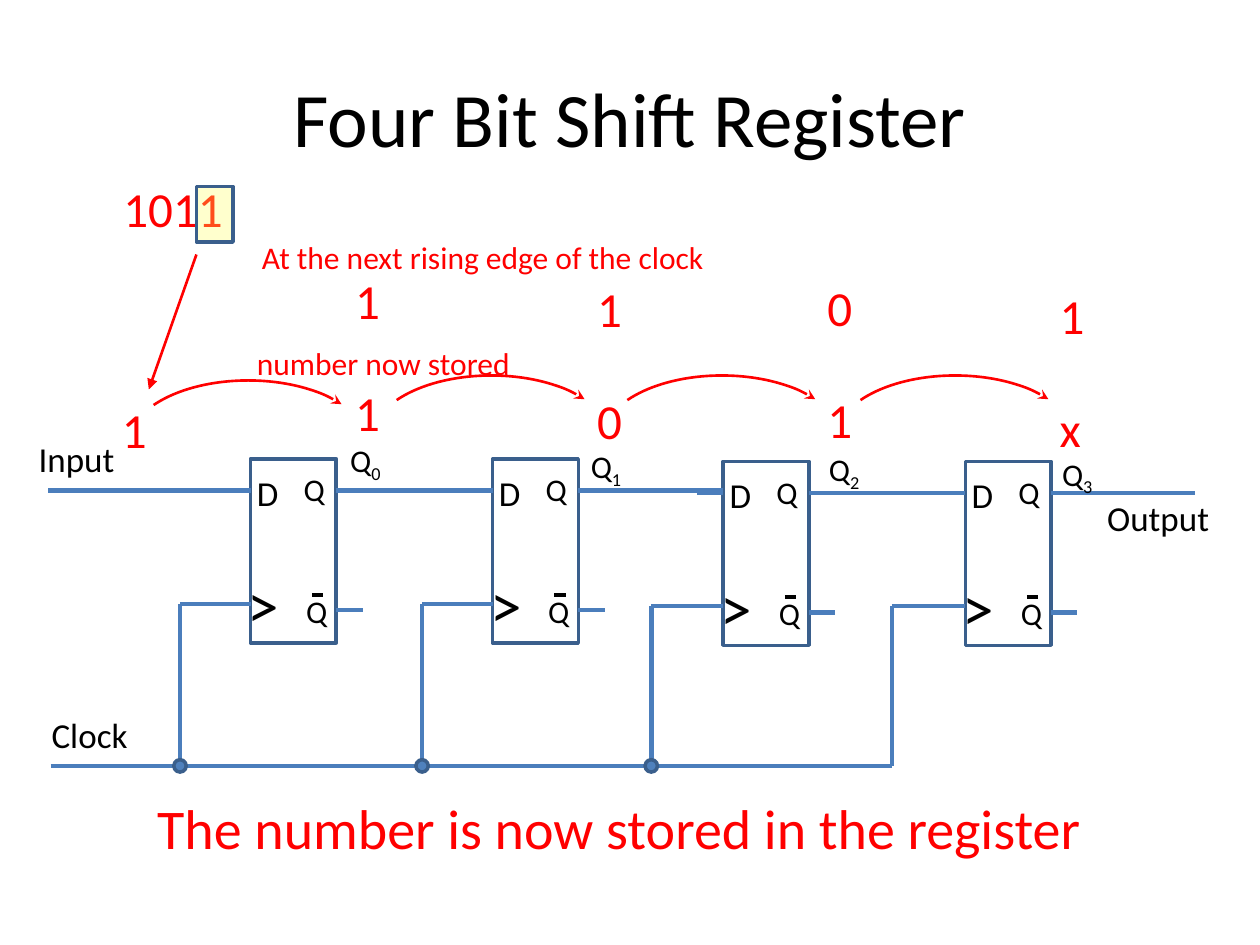
from lxml import etree
from pptx import Presentation
from pptx.dml.color import RGBColor
from pptx.enum.shapes import MSO_CONNECTOR, MSO_SHAPE
from pptx.enum.text import MSO_ANCHOR, MSO_AUTO_SIZE, PP_ALIGN
from pptx.oxml.ns import qn
from pptx.util import Cm, Pt

STRAIGHT = MSO_CONNECTOR.STRAIGHT
RECT, OVAL, ARC = MSO_SHAPE.RECTANGLE, MSO_SHAPE.OVAL, MSO_SHAPE.ARC
GROW = MSO_AUTO_SIZE.SHAPE_TO_FIT_TEXT
COLORS = {"black": "000000", "white": "FFFFFF", "red": "FF0000", "wire": "4B7EBC",
          "edge": "3A5F8C", "dot": "4F81BD", "mark": "FFFF5B"}

# Content, all lengths in cm
TITLE = "Four Bit Shift Register"
STAGES = [  # flip-flop corner, clock drop x, label corner, bit corner, arc corner, new and old bit
    {"ff": (5.05, 9.25), "drop": 3.63, "label": (6.81, 8.76), "bit": (6.91, 7.59),
     "arc": (2.59, 7.67), "new": "1", "old": "1"},
    {"ff": (9.93, 9.25), "drop": 8.51, "label": (11.66, 8.89), "bit": (11.79, 7.75),
     "arc": (7.49, 7.57), "new": "1", "old": "0"},
    {"ff": (14.58, 9.3), "drop": 13.13, "label": (16.46, 8.94), "bit": (16.43, 7.72),
     "arc": (12.14, 7.57), "new": "0", "old": "1"},
    {"ff": (19.46, 9.3), "drop": 17.98, "label": (21.16, 9.04), "bit": (21.11, 7.9),
     "arc": (16.84, 7.57), "new": "1", "old": "x"},
]
FF_W, FF_H = 1.73, 3.71
DATA_Y, CLOCK_Y, QBAR_Y = 0.64, 2.92, 3.05  # pin rows inside a flip-flop
PIN_TEXTS = [  # text, box relative to the flip-flop, size
    ("D", (-0.08, 0.13, 0.46, 1.12), 20),
    (">", (-0.3, 2.03, 0.84, 1.07), 36),
    ("Q", (0.86, 0.11, 0.46, 1.02), 18),
    ("Q", (0.91, 2.55, 0.46, 1.02), 18),
]
STUBS = [(0.75, 0.28), (2.5, 0.53)]  # line width, length
BUS_Y, BUS_LEFT, DOT = 15.44, 1.02, 0.25
DATA_LEFT, DATA_RIGHT = 0.97, 24.08
BIT_W, BIT_H, BIT_RISE = 1.09, 1.45, 2.26
PORTS = [
    ("Clock", (0.79, 14.25, 2.16, 1.12)),
    ("Input", (0.53, 8.69, 2.16, 1.12)),
    ("Output", (22.07, 9.88, 2.77, 1.12)),
]
NOTES = [
    ("1011", (2.24, 3.48, 2.79, 1.45), 28),
    ("1", (2.21, 7.92, 1.07, 1.45), 28),
    ("number now stored", (4.93, 6.81, 7.29, 1.02), 18),
    ("At the next rising edge of the clock", (5.03, 4.67, 13, 1.02), 18),
    ("The number is now stored in the register", (2.92, 15.88, 20.57, 1.63), 32),
]

prs = Presentation()
prs.slide_width, prs.slide_height = Cm(25.4), Cm(19.05)
s = prs.slides.add_slide(prs.slide_layouts[5])


def rgb(name):
    return RGBColor.from_string(COLORS[name])


def add_run(p, text, size, color="black"):
    r = p.add_run()
    r.text = text
    for name, value in {"size": Pt(size), "name": "Calibri"}.items():
        setattr(r.font, name, value)
    r.font.color.rgb = rgb(color)
    return r


def add_text(text, box, size, color="black", sub=None):
    tf = s.shapes.add_textbox(*map(Cm, box)).text_frame
    tf.word_wrap, tf.auto_size = True, GROW
    p = tf.paragraphs[0]
    add_run(p, text, size, color)
    if sub is not None:
        r = add_run(p, sub, size, color)
        r.font._element.set("baseline", "-25000")


def style_line(sp, color, width, head=None):
    sp.line.color.rgb, sp.line.width = rgb(color), Pt(width)
    if head:
        etree.SubElement(sp.line._get_or_add_ln(), qn("a:tailEnd"), type=head)


def add_line(x1, y1, x2, y2, color="wire", width=2.5, head=None):
    c = s.shapes.add_connector(STRAIGHT, Cm(x1), Cm(y1), Cm(x2), Cm(y2))
    style_line(c, color, width, head)
    etree.SubElement(c._element.spPr, qn("a:effectLst"))


def add_shape(kind, box, fill=None, line="edge", width=2, head=None):
    sp = s.shapes.add_shape(kind, *map(Cm, box))
    sp.shadow.inherit = False
    if fill:
        sp.fill.solid()
        sp.fill.fore_color.rgb = rgb(fill)
    else:
        sp.fill.background()
    style_line(sp, line, width, head)
    return sp


def add_flip_flop(x, y):
    add_shape(RECT, (x, y, FF_W, FF_H), "white")
    for text, (dx, dy, w, h), size in PIN_TEXTS:
        add_text(text, (x + dx, y + dy, w, h), size)
    add_line(x + 1.24, y + 2.74, x + 1.47, y + 2.74, "black", 2)
    for width, length in STUBS:
        for row in (DATA_Y, CLOCK_Y):
            add_line(x - length, y + row, x, y + row, width=width)
        for row in (DATA_Y, QBAR_Y):
            add_line(x + FF_W, y + row, x + FF_W + length, y + row, width=width)


# Title
title = s.shapes.title
for name, value in zip(("left", "top", "width", "height"), (1.27, 0.76, 22.86, 3.18)):
    setattr(title, name, Cm(value))
title.text_frame.vertical_anchor = MSO_ANCHOR.MIDDLE
p = title.text_frame.paragraphs[0]
p.alignment = PP_ALIGN.CENTER
add_run(p, TITLE, 44)

# Flip-flops
for stage in STAGES:
    add_flip_flop(*stage["ff"])

# Clock bus with its drops
add_line(BUS_LEFT, BUS_Y, STAGES[-1]["drop"], BUS_Y)
for stage in STAGES:
    (x, y), drop = stage["ff"], stage["drop"]
    add_line(drop, BUS_Y, drop, y + CLOCK_Y)
    add_line(drop, y + CLOCK_Y, x, y + CLOCK_Y)

# Data wires from input to output
first_x, first_y = STAGES[0]["ff"]
add_line(DATA_LEFT, first_y + DATA_Y, first_x, first_y + DATA_Y)
ends = [stage["ff"][0] for stage in STAGES[1:]] + [DATA_RIGHT]
for stage, end in zip(STAGES, ends):
    x, y = stage["ff"]
    add_line(x + FF_W, y + DATA_Y, end, y + DATA_Y)

# Port and output labels, bus junctions
for text, box in PORTS:
    add_text(text, box, 20)
for i, stage in enumerate(STAGES):
    add_text("Q", (*stage["label"], 1.19, 1.02), 18, sub=str(i))
for stage in STAGES[:-1]:
    add_shape(OVAL, (stage["drop"] - DOT / 2, BUS_Y - DOT / 2, DOT, DOT), "dot")

# Red notes, stored bits and shift arcs
for text, box, size in NOTES:
    add_text(text, box, size, "red")
for stage in STAGES:
    x, y = stage["bit"]
    add_text(stage["old"], (x, y, BIT_W, BIT_H), 28, "red")
    add_text(stage["new"], (x, y - BIT_RISE, BIT_W, BIT_H), 28, "red")
    arc = add_shape(ARC, (*stage["arc"], 4.83, 2.57), line="red", width=1.5, head="stealth")
    arc.adjustments[0], arc.adjustments[1] = 121.49, 202.09

# Highlighted input bit and its arrow
mark = add_shape(RECT, (3.96, 3.76, 0.74, 1.12), "mark")
color = mark._element.spPr.find(qn("a:solidFill"))[0]
etree.SubElement(color, qn("a:alpha"), val="30000")
add_line(3.96, 5.13, 3, 7.85, "red", 1.5, "triangle")

prs.save("out.pptx")
